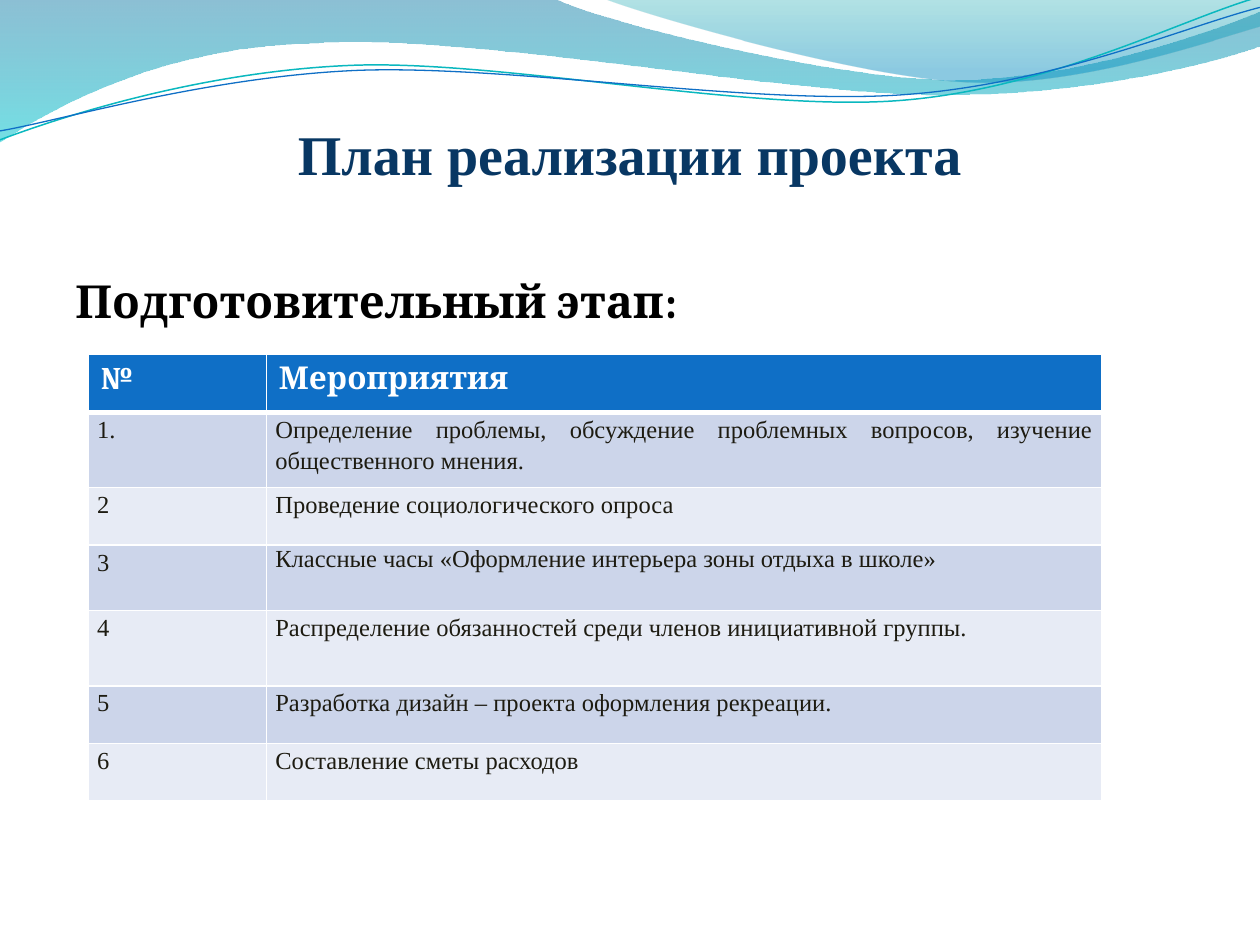
import pptx
import pptx.dml.color
import pptx.enum.text
import pptx.oxml
import pptx.oxml.ns
import pptx.util
from pptx.dml.color import RGBColor
from pptx.util import Cm

WHITE = RGBColor(0xFF, 0xFF, 0xFF)
BLACK = RGBColor(0x00, 0x00, 0x00)
NAVY = RGBColor(0x08, 0x37, 0x63)
BLUE = RGBColor(0x0F, 0x6F, 0xC6)
TEAL = RGBColor(0x0A, 0xB8, 0xBF)
INK = RGBColor(0x1D, 0x1B, 0x11)
BAND_DARK = RGBColor(0xCC, 0xD5, 0xEA)
BAND_LIGHT = RGBColor(0xE7, 0xEB, 0xF5)
WAVE_BLUE = RGBColor(0x00, 0x74, 0xA1)
WAVE_CYAN = RGBColor(0x00, 0xC6, 0xCF)
CREST_TEAL = RGBColor(0x00, 0xA1, 0xA9)
CREST_BLUE = RGBColor(0x00, 0x8B, 0xBF)

SERIF = "Times New Roman"
HEADING = "Cambria"
ALIGN = pptx.enum.text.PP_ALIGN
ANCHOR = pptx.enum.text.MSO_ANCHOR

# Outlines in cm: a start point, then lines (x, y) or cubic curves (6 numbers).
WAVE = [
    (0, 0), (11.18, -0.03),
    (12.09, 0.43, 16.87, 1.6, 19.25, 1.6), (21.67, 1.6, 24.33, 0.66, 25.4, 0.23),
    (25.43, 0.91),
    (24.97, 1.12, 22.1, 1.93, 18.95, 1.91), (15.8, 1.91, 9.7, 0.71, 6.53, 0.86),
    (3.28, 0.91, 1.17, 2.11, -0.03, 2.87), (0, 0),
]
CREST = [
    (12.17, -0.03),
    (12.93, 0.28, 17.32, 1.57, 19.53, 1.65), (21.74, 1.75, 24.41, 0.81, 25.4, 0.53),
    (25.4, 0), (12.17, -0.03),
]
TEAL_LINE = [
    (0, 2.82),
    (1.22, 2.36, 4.01, 1.45, 7.04, 1.32), (10.03, 1.19, 15.06, 2.26, 18.11, 2.03),
    (21.16, 1.8, 23.83, 0.38, 25.35, -0.05),
]
BLUE_LINE = [
    (0, 2.64),
    (1.19, 2.44, 4.17, 1.55, 7.19, 1.42), (10.24, 1.3, 15.16, 2.13, 18.21, 1.91),
    (21.23, 1.7, 23.9, 0.53, 25.4, 0.15),
]

HEADERS = ("№", "Мероприятия")
ACTIVITIES = [
    ("1.", "Определение проблемы, обсуждение проблемных вопросов, изучение общественного мнения."),
    ("2", "Проведение социологического опроса"),
    ("3", "Классные часы «Оформление интерьера зоны отдыха в школе»"),
    ("4", "Распределение обязанностей среди членов инициативной группы."),
    ("5", "Разработка дизайн – проекта оформления рекреации."),
    ("6", "Составление сметы расходов"),
]
SINGLE_SPACED = (3, 1)
COLUMN_WIDTHS = (3.59, 16.84)
ROW_HEIGHTS = (1.16, 1.52, 1.16, 1.32, 1.52, 1.16, 1.16)


class SlideBuilder:
    def __init__(self, slide):
        self.slide = slide

    def style(self, paragraph, text, font, size, color, bold=False, align=ALIGN.LEFT):
        paragraph.text = text
        paragraph.alignment = align
        paragraph.font.name = font
        paragraph.font.size = pptx.util.Pt(size)
        paragraph.font.color.rgb = color
        paragraph.font.bold = bold

    def outline(self, outline, close):
        """Draw all points as lines, then join each curve's three into one Bézier."""
        start, *segments = outline
        points = [(Cm(segment[i]), Cm(segment[i + 1]))
                  for segment in segments for i in range(0, len(segment), 2)]
        builder = self.slide.shapes.build_freeform(Cm(start[0]), Cm(start[1]))
        builder.add_line_segments(points, close=close)
        shape = builder.convert_to_shape()
        shape.shadow.inherit = False
        lines = iter(list(shape.element.spPr.iter(pptx.oxml.ns.qn("a:lnTo"))))
        for segment in segments:
            line = next(lines)
            if len(segment) == 6:
                curve = pptx.oxml.parse_xml(
                    f'<a:cubicBezTo {pptx.oxml.ns.nsdecls("a")}/>')
                line.addprevious(curve)
                for part in (line, next(lines), next(lines)):
                    curve.append(part[0])
                    part.getparent().remove(part)
        return shape

    def ribbon(self, outline, *stops):
        """Filled outline; each stop is (position, colour, opacity in percent)."""
        shape = self.outline(outline, True)
        shape.line.fill.background()
        shape.fill.gradient()
        shape.fill.gradient_angle = 270
        for stop, (position, color, _) in zip(shape.fill.gradient_stops, stops):
            stop.position = position
            stop.color.rgb = color
        colors = shape.element.spPr.iter(pptx.oxml.ns.qn("a:srgbClr"))
        for element, (_, _, opacity) in zip(colors, stops):
            element.append(pptx.oxml.parse_xml(
                f'<a:alpha {pptx.oxml.ns.nsdecls("a")} val="{opacity * 1000}"/>'))

    def curve(self, outline, color, width):
        shape = self.outline(outline, False)
        shape.fill.background()
        shape.line.color.rgb = color
        shape.line.width = pptx.util.Pt(width)

    def text(self, left, top, width, height, text, font, size, color,
             align=ALIGN.LEFT, anchor=ANCHOR.TOP, side_margin=0.25, bottom_margin=0.13):
        shape = self.slide.shapes.add_textbox(Cm(left), Cm(top), Cm(width), Cm(height))
        frame = shape.text_frame
        frame.word_wrap = True
        frame.vertical_anchor = anchor
        frame.margin_left = frame.margin_right = Cm(side_margin)
        frame.margin_bottom = Cm(bottom_margin)
        self.style(frame.paragraphs[0], text, font, size, color, True, align)

    def borders(self, cell, top, bottom):
        properties = cell._tc.get_or_add_tcPr()
        for index, (side, width) in enumerate(
                (("L", 1), ("R", 1), ("T", top), ("B", bottom))):
            properties.insert(index, pptx.oxml.parse_xml(
                f'<a:ln{side} {pptx.oxml.ns.nsdecls("a")} w="{width * 12700}">'
                f'<a:solidFill><a:srgbClr val="{WHITE}"/></a:solidFill></a:ln{side}>'))

    def table(self, left, top, rows):
        frame = self.slide.shapes.add_table(
            len(rows), len(COLUMN_WIDTHS), Cm(left), Cm(top),
            Cm(sum(COLUMN_WIDTHS)), Cm(sum(ROW_HEIGHTS)))
        table = frame.table
        for column, width in zip(table.columns, COLUMN_WIDTHS):
            column.width = Cm(width)
        for row, height in zip(table.rows, ROW_HEIGHTS):
            row.height = Cm(height)
        for row_index, texts in enumerate(rows):
            for column_index, text in enumerate(texts):
                cell = table.cell(row_index, column_index)
                paragraph = cell.text_frame.paragraphs[0]
                cell.fill.solid()
                if row_index == 0:
                    cell.fill.fore_color.rgb = BLUE
                    self.style(paragraph, text, HEADING, 18, WHITE, True)
                else:
                    cell.fill.fore_color.rgb = BAND_DARK if row_index % 2 else BAND_LIGHT
                    cell.margin_left = cell.margin_right = Cm(0.18)
                    cell.margin_top = cell.margin_bottom = 0
                    self.style(paragraph, text, SERIF, 14, INK, align=ALIGN.JUSTIFY)
                    if (row_index, column_index) != SINGLE_SPACED:
                        paragraph.line_spacing = 1.15
                self.borders(cell, 3 if row_index == 1 else 1, 3 if row_index == 0 else 1)


def main():
    presentation = pptx.Presentation()
    presentation.slide_width = Cm(25.4)
    presentation.slide_height = Cm(19.05)
    builder = SlideBuilder(presentation.slides.add_slide(presentation.slide_layouts[6]))
    builder.ribbon(WAVE, (0, WAVE_BLUE, 45), (1, WAVE_CYAN, 55))
    builder.ribbon(CREST, (0, CREST_TEAL, 30), (0.8, CREST_BLUE, 45))
    builder.curve(TEAL_LINE, TEAL, 0.85)
    builder.curve(BLUE_LINE, BLUE, 0.75)
    builder.text(1.27, 1.96, 22.86, 1.8, "План реализации проекта", SERIF, 32, NAVY,
                 ALIGN.CENTER, ANCHOR.BOTTOM, 0, 0)
    builder.text(1.27, 5.38, 22.86, 12.19, "Подготовительный этап:", HEADING, 26, BLACK)
    builder.table(1.78, 7.15, [HEADERS] + ACTIVITIES)
    presentation.save("out.pptx")


if __name__ == "__main__":
    main()
